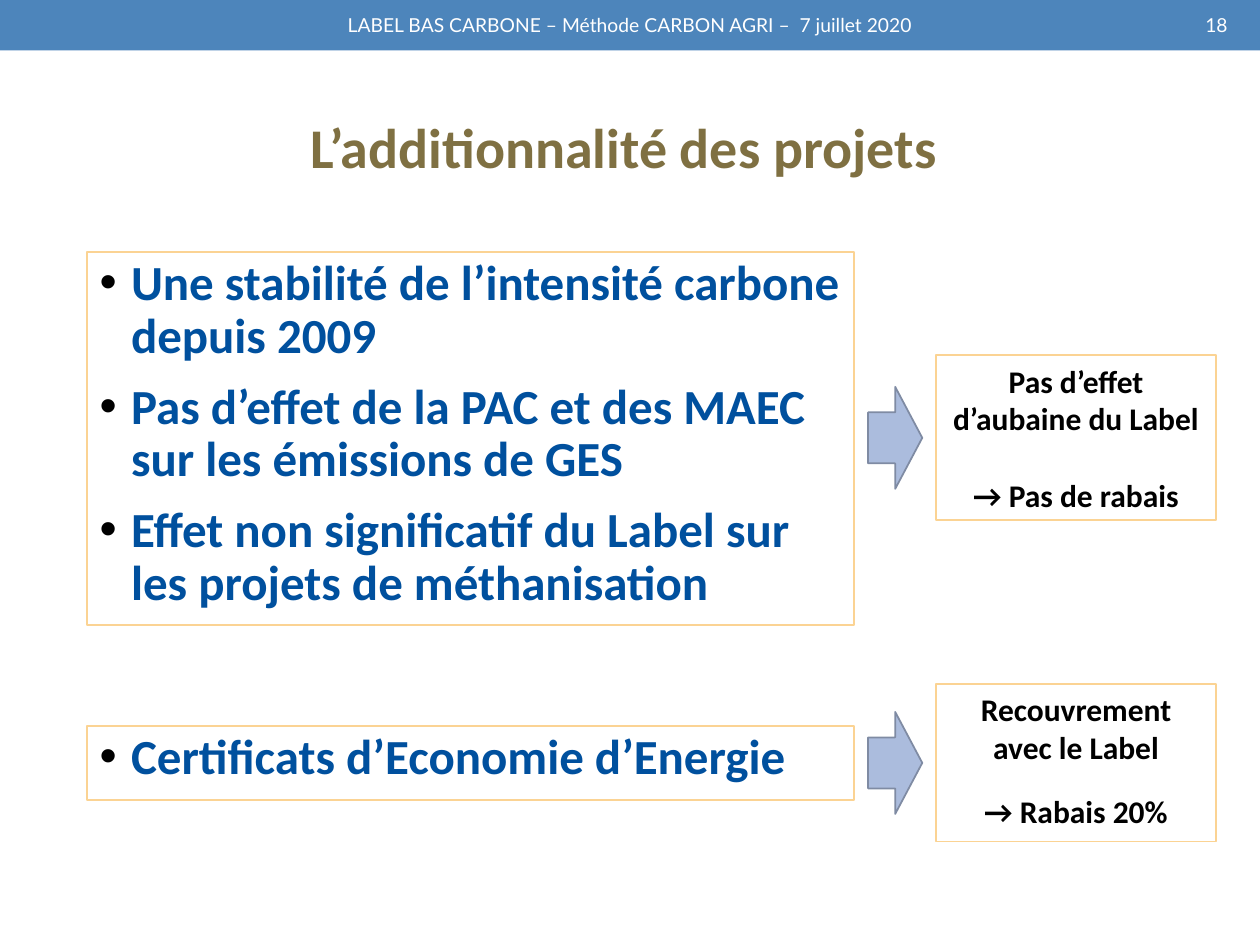
from lxml import etree
from pptx import Presentation
from pptx.dml.color import RGBColor
from pptx.enum.shapes import MSO_SHAPE
from pptx.enum.text import MSO_ANCHOR, MSO_AUTO_SIZE, PP_ALIGN
from pptx.oxml.ns import qn
from pptx.util import Inches, Pt

RECTANGLE, ARROW = MSO_SHAPE.RECTANGLE, MSO_SHAPE.RIGHT_ARROW
TOP, MIDDLE = MSO_ANCHOR.TOP, MSO_ANCHOR.MIDDLE
LEFT, CENTER = PP_ALIGN.LEFT, PP_ALIGN.CENTER
NO_FIT = MSO_AUTO_SIZE.NONE
TWO_CONTENT_LAYOUT = 3
COLORS = {
    "white": "FFFFFF", "black": "000000", "header": "4D85BB",
    "title": "7F7042", "blue": "00509E", "border": "FBD393",
    "arrow": "ABBCDD", "arrow_line": "7F8BA3",
}
MARGIN, LIST_WIDTH = 0.69, 6.09
HEADER_HEIGHT = 0.4


def color(name):
    """Return the named colour."""
    return RGBColor.from_string(COLORS[name])


def place(shape, box):
    """Move a shape to a box of left, top, width and height in inches."""
    shape.left, shape.top, shape.width, shape.height = map(Inches, box)


def paint(shape, fill, line=None):
    """Set the fill and the outline of a shape."""
    shape.fill.solid()
    shape.fill.fore_color.rgb = color(fill)
    if line:
        shape.line.color.rgb = color(line)
        shape.line.width = Pt(1)
    else:
        shape.line.fill.background()


def add_shape(page, kind, box, fill, line=None):
    """Add a preset shape without shadow."""
    shape = page.shapes.add_shape(kind, *map(Inches, box))
    shape.shadow.inherit = False
    paint(shape, fill, line)
    return shape


def add_bullet(para):
    """Give a paragraph a hanging black bullet."""
    properties = para._p.get_or_add_pPr()
    properties.set("marL", str(Inches(0.25)))
    properties.set("indent", str(Inches(-0.25)))
    bullet_color = etree.SubElement(properties, qn("a:buClr"))
    etree.SubElement(bullet_color, qn("a:srgbClr"), val=COLORS["black"])
    etree.SubElement(properties, qn("a:buFont"), typeface="Arial")
    etree.SubElement(properties, qn("a:buChar"), char="•")


def write(shape, *texts, size, ink, font="Calibri", bold=True, align=CENTER,
          anchor=TOP, line_spacing=1.0, gap=0, bullets=False):
    """Write formatted paragraphs into a shape, with a gap between them."""
    frame = shape.text_frame
    frame.word_wrap = True
    frame.auto_size = NO_FIT
    frame.vertical_anchor = anchor
    for index, text in enumerate(texts):
        para = frame.add_paragraph() if index else frame.paragraphs[0]
        if bullets:
            add_bullet(para)
        para.alignment = align
        para.line_spacing = line_spacing
        para.space_before = Pt(gap if index else 0)
        para.space_after = Pt(0)
        span = para.add_run()
        span.text = text
        span.font.name = font
        span.font.size = Pt(size)
        span.font.bold = bold
        span.font.color.rgb = color(ink)


def draw_header(page, box, text, number):
    """Draw the header band with its text and the page number."""
    left, top, width, height = box
    add_shape(page, RECTANGLE, box, "header")
    label_box = (left + MARGIN, top, width - 2 * MARGIN, height)
    number_box = (left + width - MARGIN, top, MARGIN, height)
    for part, words in ((label_box, text), (number_box, number)):
        label = page.shapes.add_textbox(*map(Inches, part))
        write(label, words, size=11, ink="white", font="Lato", bold=False,
              anchor=MIDDLE)


def draw_title(title, box, text):
    """Place and fill the title."""
    place(title, box)
    write(title, text, size=32, ink="title", anchor=MIDDLE, line_spacing=0.9)


def draw_list(body, box, points):
    """Place and fill a framed bullet list."""
    place(body, box)
    paint(body, "white", "border")
    write(body, *points, size=28, ink="blue", align=LEFT, line_spacing=0.9,
          gap=10, bullets=True)


def draw_conclusion(page, box, texts, gap):
    """Draw an arrow followed by a framed conclusion, centred on each other."""
    left, top, width, height = box
    arrow_width, arrow_height, offset = 0.43, 0.81, 0.54
    arrow_top = top + (height - arrow_height) / 2
    frame = add_shape(page, RECTANGLE,
                      (left + offset, top, width - offset, height),
                      "white", "border")
    write(frame, *texts, size=18, ink="black", gap=gap)
    add_shape(page, ARROW, (left, arrow_top, arrow_width, arrow_height),
              "arrow", "arrow_line")


def main():
    """Build the deck."""
    deck = Presentation()
    deck.slide_width, deck.slide_height = Inches(10), Inches(7.5)
    page = deck.slides.add_slide(deck.slide_layouts[TWO_CONTENT_LAYOUT])
    title, projects, certificates = page.placeholders
    draw_header(page, (0, 0, 10, HEADER_HEIGHT),
                "LABEL BAS CARBONE – Méthode CARBON AGRI –  7 juillet 2020",
                "18")
    draw_title(title, (MARGIN, 0.47, 8.62, 1.45),
               "L’additionnalité des projets ")
    draw_list(projects, (MARGIN, 2, LIST_WIDTH, 2.96), (
        "Une stabilité de l’intensité carbone depuis 2009",
        "Pas d’effet de la PAC et des MAEC sur les émissions de GES",
        "Effet non significatif du Label sur les projets de méthanisation",
    ))
    draw_conclusion(page, (6.89, 2.82, 2.76, 1.31),
                    ("Pas d’effet d’aubaine du Label", "→ Pas de rabais"), 22)
    draw_list(certificates, (MARGIN, 5.76, LIST_WIDTH, 0.59),
              ("Certificats d’Economie d’Energie",))
    draw_conclusion(page, (6.89, 5.43, 2.76, 1.25),
                    ("Recouvrement avec le Label", "→ Rabais 20%"), 15)
    deck.save("out.pptx")


if __name__ == "__main__":
    main()
